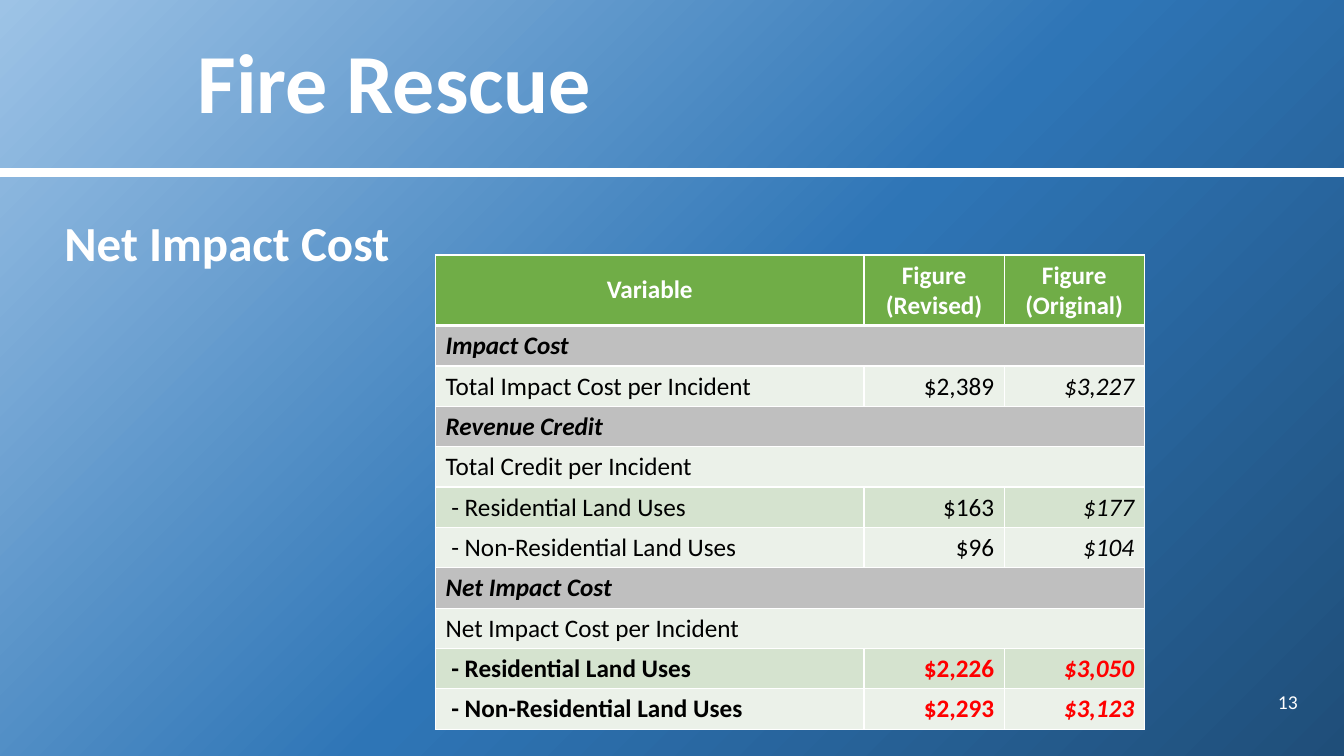
from pptx import Presentation
from pptx.dml.color import RGBColor
from pptx.enum.shapes import MSO_CONNECTOR
from pptx.enum.text import MSO_ANCHOR, PP_ALIGN
from pptx.oxml import parse_xml
from pptx.oxml.ns import nsdecls, qn
from pptx.util import Inches, Pt

WHITE = RGBColor(0xFF, 0xFF, 0xFF)
BLACK = RGBColor(0, 0, 0)
RED = RGBColor(0xFF, 0, 0)
GREEN = RGBColor(0x70, 0xAD, 0x47)
GRAY = RGBColor(0xBF, 0xBF, 0xBF)
PALE = RGBColor(0xEB, 0xF1, 0xE9)
MINT = RGBColor(0xD5, 0xE3, 0xCF)
SKY = RGBColor(0x9D, 0xC3, 0xE6)
BLUE = RGBColor(0x2E, 0x75, 0xB6)
NAVY = RGBColor(0x1F, 0x4E, 0x79)

HEADER = ("Variable", "Figure (Revised)", "Figure (Original)")
# Each row: kind, then its texts
ROWS = [
    ("section", "Impact Cost"),
    ("plain", "Total Impact Cost per Incident", "$2,389", "$3,227"),
    ("section", "Revenue Credit"),
    ("plain", "Total Credit per Incident"),
    ("plain", " - Residential Land Uses", "$163", "$177"),
    ("plain", " - Non-Residential Land Uses", "$96", "$104"),
    ("section", "Net Impact Cost"),
    ("plain", "Net Impact Cost per Incident"),
    ("net", " - Residential Land Uses", "$2,226", "$3,050"),
    ("net", " - Non-Residential Land Uses", "$2,293", "$3,123"),
]


class SlideBuilder:
    """Holds the slide and its text style."""

    font = "Calibri"

    def __init__(self, prs):
        self.s = prs.slides.add_slide(prs.slide_layouts[5])

    def background(self, stops):
        """Radial gradient spreading from the top left corner."""
        gs = "".join(f'<a:gs pos="{pos * 1000}"><a:srgbClr val="{color}"/></a:gs>'
                     for pos, color in stops)
        self.s.background.fill.gradient()
        old = self.s.element.find(".//" + qn("a:gradFill"))
        old.getparent().replace(old, parse_xml(
            f'<a:gradFill {nsdecls("a")} rotWithShape="1"><a:gsLst>{gs}</a:gsLst>'
            '<a:path path="circle"><a:fillToRect r="100000" b="100000"/></a:path>'
            '<a:tileRect l="-100000" t="-100000"/></a:gradFill>'))

    def put_text(self, tf, text, size, color=WHITE, bold=False, italic=False,
                 align=PP_ALIGN.LEFT):
        tf.word_wrap = True
        tf.text = text
        p = tf.paragraphs[0]
        p.alignment = align
        f = p.runs[0].font
        f.name, f.size, f.bold, f.italic = self.font, Pt(size), bold, italic
        f.color.rgb = color
        return p

    def title(self, text, box):
        sp = self.s.shapes.title
        sp.left, sp.top, sp.width, sp.height = map(Inches, box)
        sp.text_frame.vertical_anchor = MSO_ANCHOR.MIDDLE
        p = self.put_text(sp.text_frame, text, 60, bold=True)
        p.line_spacing = 0.9
        sp.element.find(".//" + qn("a:solidFill")).addnext(parse_xml(
            f'<a:effectLst {nsdecls("a")}><a:outerShdw blurRad="38100" dist="38100" '
            'dir="2700000" algn="tl"><a:srgbClr val="000000"><a:alpha val="43000"/>'
            '</a:srgbClr></a:outerShdw></a:effectLst>'))

    def text(self, text, box, size, anchor=MSO_ANCHOR.TOP, **style):
        tf = self.s.shapes.add_textbox(*map(Inches, box)).text_frame
        tf.vertical_anchor = anchor
        return self.put_text(tf, text, size, **style)

    def rule(self, x1, x2, y, width):
        rule = self.s.shapes.add_connector(
            MSO_CONNECTOR.STRAIGHT, Inches(x1), Inches(y), Inches(x2), Inches(y))
        rule.line.color.rgb = WHITE
        rule.line.width = Pt(width)
        rule._element.spPr.append(parse_xml(f'<a:effectLst {nsdecls("a")}/>'))

    def borders(self, cell, top, bottom):
        tcPr = cell._tc.get_or_add_tcPr()
        widths = (("lnL", 1), ("lnR", 1), ("lnT", top), ("lnB", bottom))
        for i, (tag, width) in enumerate(widths):
            tcPr.insert(i, parse_xml(
                f'<a:{tag} {nsdecls("a")} w="{Pt(width)}"><a:solidFill>'
                f'<a:srgbClr val="{WHITE}"/></a:solidFill></a:{tag}>'))

    def table(self, box, col_widths, header, rows):
        table = self.s.shapes.add_table(
            len(rows) + 1, len(header), *map(Inches, box)).table
        for col, width in zip(table.columns, col_widths):
            col.width = Inches(width)
        for i, (kind, *texts) in enumerate([("header", *header), *rows]):
            table.rows[i].height = Inches(0.4 if i else 0.7)
            band = MINT if i % 2 else PALE
            fill = {"header": GREEN, "section": GRAY}.get(kind, band)
            for j, cell in enumerate(table.rows[i].cells):
                cell.fill.solid()
                cell.fill.fore_color.rgb = fill
                self.borders(cell, 3 if i == 1 else 1, 1 if i else 3)
                if j < len(texts):
                    self.cell_text(cell, kind, j, texts[j])
            if len(texts) == 1:
                table.cell(i, 0).merge(table.cell(i, len(header) - 1))

    def cell_text(self, cell, kind, col, text):
        if kind == "header":
            cell.vertical_anchor = MSO_ANCHOR.MIDDLE
            color, align = WHITE, PP_ALIGN.CENTER
        else:
            color = RED if kind == "net" and col else BLACK
            align = PP_ALIGN.RIGHT if col else PP_ALIGN.LEFT
        italic = kind == "section" or (kind != "header" and col == 2)
        self.put_text(cell.text_frame, text, 18, color, kind != "plain", italic, align)


def main():
    prs = Presentation()
    prs.slide_width, prs.slide_height = Inches(13.33), Inches(7.5)
    slide = SlideBuilder(prs)
    slide.background([(0, SKY), (53, BLUE), (100, NAVY)])
    slide.rule(-0.02, 13.33, 1.71, 6)
    slide.text("13", (12.08, 6.76, 0.89, 0.4), 14, MSO_ANCHOR.MIDDLE,
               align=PP_ALIGN.RIGHT)
    heading = slide.text("Net Impact Cost", (0.54, 1.94, 12.42, 5.27), 35, bold=True)
    heading.line_spacing = 1.2
    slide.table((4.32, 2.53, 7.03, 4.7), (4.25, 1.39, 1.39), HEADER, ROWS)
    slide.title("Fire Rescue", (1.86, 0, 11.1, 1.71))
    prs.save("out.pptx")


if __name__ == "__main__":
    main()
